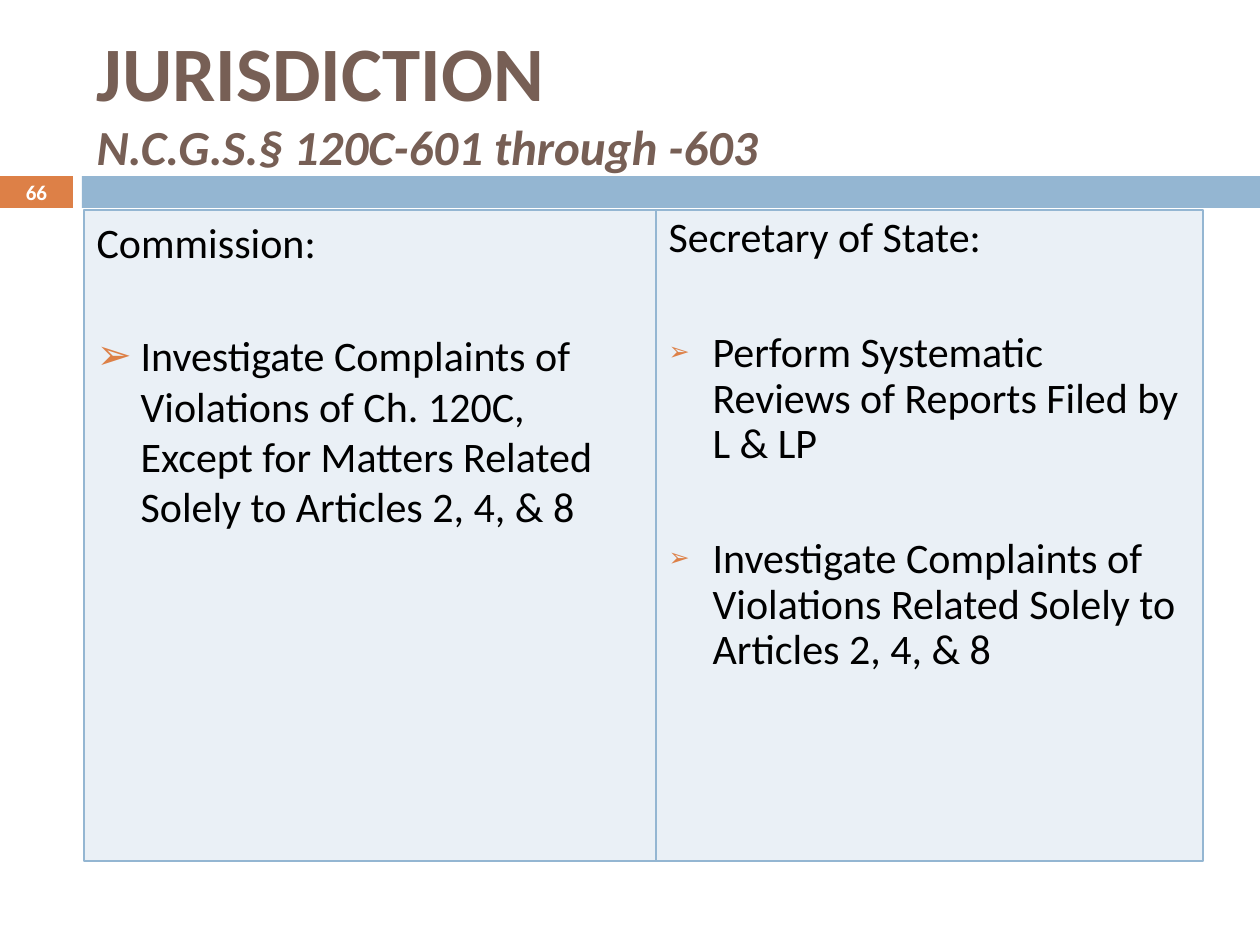
from dataclasses import dataclass

from lxml import etree
from pptx import Presentation
from pptx.dml.color import RGBColor
from pptx.enum import shapes, text
from pptx.oxml import ns
from pptx.util import Emu, Pt

SCALE = 914400 / 126
FONT = "Calibri"
ORANGE, BLUE, PALE = "DD8047", "94B6D2", "EAF0F6"
BROWN, BLACK, WHITE = "775F55", "000000", "FFFFFF"
INDENT = 44


@dataclass(frozen=True)
class Box:
    left: int
    top: int
    width: int
    height: int


@dataclass(frozen=True)
class Duty:
    box: Box
    holder: str
    tasks: tuple[str, ...]
    line_spacing: float
    task_gap: int
    bullet_percent: int


BANDS = ((Box(0, 176, 73, 32), ORANGE), (Box(82, 176, 1178, 32), BLUE))
DUTIES = (
    Duty(
        Box(84, 210, 572, 651),
        "Commission:",
        ("Investigate Complaints of Violations of Ch. 120C, "
         "Except for Matters Related Solely to Articles 2, 4, & 8",),
        1.0, 36, 100,
    ),
    Duty(
        Box(656, 210, 547, 651),
        "Secretary of State:",
        ("Perform Systematic Reviews of Reports Filed by L & LP",
         "Investigate Complaints of Violations Related Solely to Articles 2, 4, & 8"),
        0.9, 40, 60,
    ),
)


def px(length: int) -> Emu:
    return Emu(round(length * SCALE))


def color(value: str) -> RGBColor:
    return RGBColor.from_string(value)


def place(shape, box: Box) -> None:
    shape.left, shape.top = px(box.left), px(box.top)
    shape.width, shape.height = px(box.width), px(box.height)


def write(paragraph, words: str, *, size: int, ink: str = BLACK,
          bold: bool = False, italic: bool = False) -> None:
    run = paragraph.add_run()
    run.text = words
    font = run.font
    font.name, font.size = FONT, Pt(size)
    font.bold, font.italic = bold, italic
    font.color.rgb = color(ink)


def set_bullet(paragraph, percent: int = 0) -> None:
    properties = paragraph._p.get_or_add_pPr()
    properties.set("marL", str(px(INDENT)))
    properties.set("indent", str(-px(INDENT)))
    if not percent:
        etree.SubElement(properties, ns.qn("a:buNone"))
        return
    tint = etree.SubElement(properties, ns.qn("a:buClr"))
    etree.SubElement(tint, ns.qn("a:srgbClr"), val=ORANGE)
    etree.SubElement(properties, ns.qn("a:buSzPct"), val=str(percent * 1000))
    etree.SubElement(properties, ns.qn("a:buChar"), char="➢")


def draw_band(slide, box: Box, fill: str) -> None:
    band = slide.shapes.add_shape(shapes.MSO_SHAPE.RECTANGLE, 0, 0, 0, 0)
    place(band, box)
    band.shadow.inherit = False
    band.fill.solid()
    band.fill.fore_color.rgb = color(fill)
    band.line.fill.background()


def fill_heading(heading) -> None:
    place(heading, Box(84, 32, 1124, 136))
    frame = heading.text_frame
    frame.auto_size = text.MSO_AUTO_SIZE.NONE
    frame.vertical_anchor = text.MSO_ANCHOR.MIDDLE
    line = frame.paragraphs[0]
    line.alignment = text.PP_ALIGN.LEFT
    write(line, "JURISDICTION", size=44, ink=BROWN, bold=True)
    line.add_line_break()
    write(line, "N.C.G.S.§ 120C-601 through -603", size=28, ink=BROWN,
          bold=True, italic=True)


def fill_duty(body, duty: Duty) -> None:
    place(body, duty.box)
    body.fill.solid()
    body.fill.fore_color.rgb = color(PALE)
    body.line.color.rgb = color(BLUE)
    body.line.width = Pt(0.75)
    frame = body.text_frame
    frame.auto_size = text.MSO_AUTO_SIZE.NONE
    for index, words in enumerate((duty.holder, *duty.tasks)):
        paragraph = frame.add_paragraph() if index else frame.paragraphs[0]
        paragraph.line_spacing = duty.line_spacing
        paragraph.space_before = Pt(duty.task_gap if index else 7)
        set_bullet(paragraph, duty.bullet_percent if index else 0)
        write(paragraph, words, size=24)


def draw_page_number(slide, number: str) -> None:
    page = slide.shapes.add_textbox(0, 0, 0, 0)
    place(page, Box(0, 175, 73, 34))
    frame = page.text_frame
    frame.word_wrap = True
    frame.vertical_anchor = text.MSO_ANCHOR.MIDDLE
    frame.margin_top = frame.margin_bottom = 0
    frame.paragraphs[0].alignment = text.PP_ALIGN.CENTER
    write(frame.paragraphs[0], number, size=12, ink=WHITE, bold=True)


def main() -> None:
    deck = Presentation()
    deck.slide_width, deck.slide_height = px(1260), px(945)
    slide = deck.slides.add_slide(deck.slide_layouts.get_by_name("Two Content"))
    for box, fill in BANDS:
        draw_band(slide, box, fill)
    heading, *bodies = slide.placeholders
    fill_heading(heading)
    for body, duty in zip(bodies, DUTIES):
        fill_duty(body, duty)
    draw_page_number(slide, "66")
    deck.save("out.pptx")


if __name__ == "__main__":
    main()
